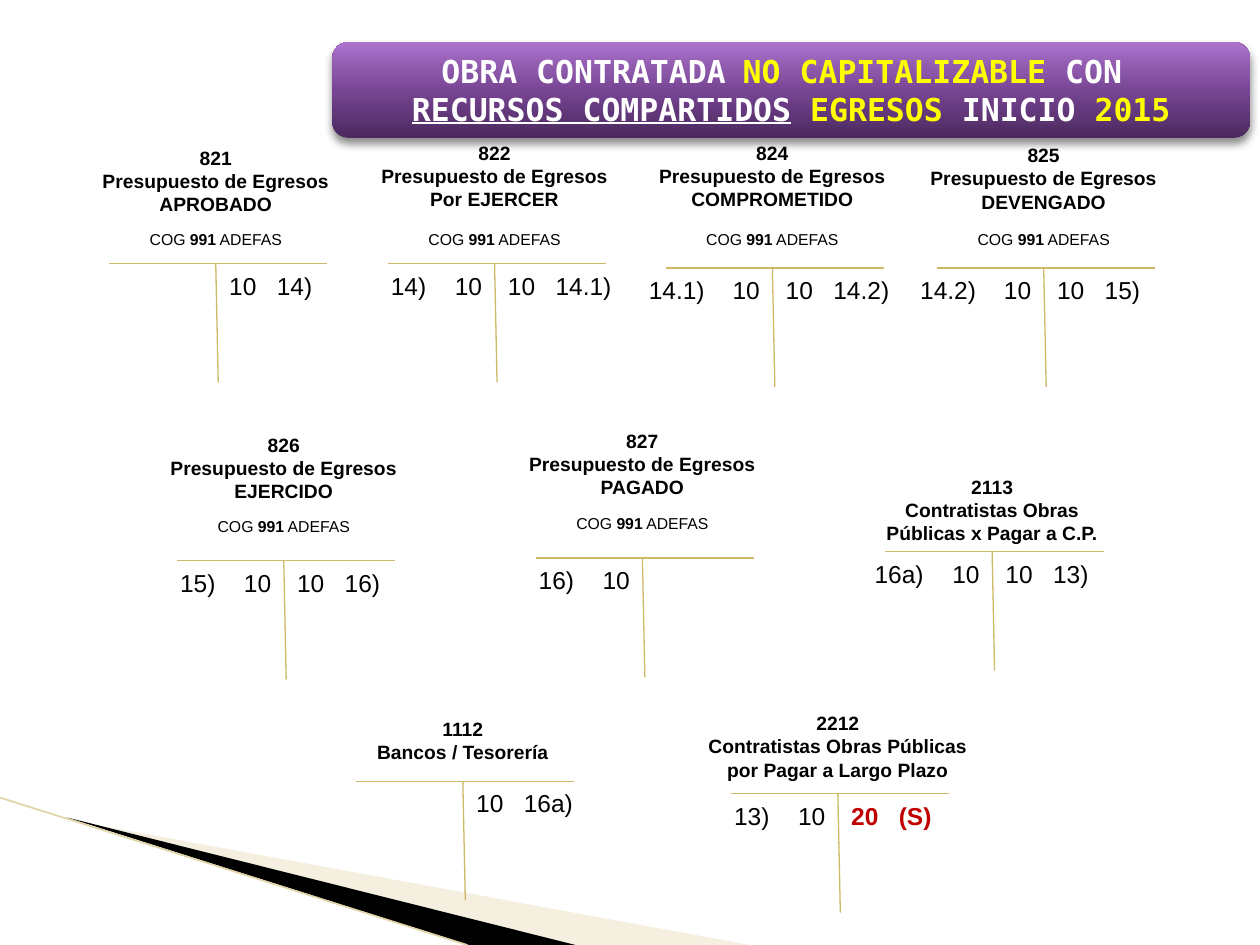
from dataclasses import dataclass

from lxml import etree
from pptx import Presentation
from pptx.dml.color import RGBColor
from pptx.enum.shapes import MSO_CONNECTOR, MSO_SHAPE
from pptx.enum.text import MSO_ANCHOR, MSO_AUTO_SIZE, PP_ALIGN
from pptx.oxml.ns import qn
from pptx.util import Cm, Pt

BLACK = RGBColor(0x00, 0x00, 0x00)
WHITE = RGBColor(0xFF, 0xFF, 0xFF)
YELLOW = RGBColor(0xFF, 0xFF, 0x00)
RED = RGBColor(0xC0, 0x00, 0x00)
GOLD = RGBColor(0xCE, 0xB9, 0x66)
PALE_GOLD = RGBColor(0xE1, 0xD3, 0xA6)
CREAM = RGBColor(0xE4, 0xD7, 0xAD)
BANNER_STOPS = [
    (0, RGBColor(0x4B, 0x29, 0x5E)),
    (50, RGBColor(0x78, 0x45, 0x94)),
    (70, RGBColor(0x8C, 0x58, 0xAA)),
    (100, RGBColor(0xAD, 0x73, 0xCF)),
]

LEFT, CENTER = PP_ALIGN.LEFT, PP_ALIGN.CENTER
MIDDLE = MSO_ANCHOR.MIDDLE
GROW = MSO_AUTO_SIZE.SHAPE_TO_FIT_TEXT
STRAIGHT = MSO_CONNECTOR.STRAIGHT
ROUNDED = MSO_SHAPE.ROUNDED_RECTANGLE

INSET = 0.25
BAR_WIDTH, BAR_LEFT_PART = 4.4, 2.15
STEM_HEIGHT, STEM_SLANT = 2.4, 0.05
ENTRY_HEIGHT, CREDIT_WIDTH, CREDIT_TAB = 0.86, 3.38, 0.96

HEADING = {"size": Pt(11), "name": "Arial", "bold": True}
SMALL = {"size": Pt(9), "name": "Arial", "bold": False}
ENTRY = {"size": Pt(14), "name": "Arial", "bold": False}
BANNER = {"size": Pt(18), "name": "DejaVu Sans Mono", "bold": True}


@dataclass
class Account:
    """A T account in cm: everything is centred on its stem."""
    number: str
    title: str
    stem: float
    bar_top: float
    title_top: float
    title_width: float
    debit: str = ""
    debit_width: float = 2.34
    credit: str = ""
    cog_top: float = 0
    is_balance: bool = False


ACCOUNTS = [
    Account("821", "Presupuesto de Egresos APROBADO", 4.35, 5.31, 2.82, 5.2,
            credit="10\t14)", cog_top=4.5),
    Account("822", "Presupuesto de Egresos Por EJERCER", 9.97, 5.31, 2.72, 5.2,
            "14)\t10", credit="10\t14.1)", cog_top=4.5),
    Account("824", "Presupuesto de Egresos COMPROMETIDO", 15.57, 5.4, 2.72, 5.36,
            "14.1)\t10", 2.74, "10\t14.2)", 4.5),
    Account("825", "Presupuesto de Egresos DEVENGADO", 21.04, 5.4, 2.77, 6.2,
            "14.2)\t10", 2.74, "10\t15)", 4.5),
    Account("826", "Presupuesto de Egresos EJERCIDO", 5.72, 11.3, 8.61, 5.94,
            "15)\t10", credit="10\t16)", cog_top=10.29),
    Account("827", "Presupuesto de Egresos PAGADO", 12.95, 11.25, 8.53, 5.16,
            "16)\t10", cog_top=10.24),
    Account("2113", "Contratistas Obras Públicas x Pagar a C.P.", 20, 11.12, 9.45, 5,
            "16a)\t10", 2.62, "10\t13)"),
    Account("1112", "Bancos / Tesorería", 9.33, 15.75, 14.33, 6.35,
            credit="10\t16a)"),
    Account("2212", "Contratistas Obras Públicas por Pagar a Largo Plazo", 16.89, 16,
            14.22, 6.35, "13)\t10", credit="20\t(S)", is_balance=True),
]


def add_run(paragraph, text, style, color=BLACK, **changes):
    run = paragraph.add_run()
    run.text = text
    for name, value in {**style, **changes}.items():
        setattr(run.font, name, value)
    run.font.color.rgb = color


def add_paragraph(frame, is_first, alignment=LEFT):
    paragraph = frame.paragraphs[0] if is_first else frame.add_paragraph()
    paragraph.alignment = alignment
    return paragraph


def add_text_frame(slide, left, top, width, height):
    frame = slide.shapes.add_textbox(Cm(left), Cm(top), Cm(width), Cm(height)).text_frame
    frame.word_wrap = True
    frame.auto_size = GROW
    return frame


def add_line(slide, start, end, color, width):
    line = slide.shapes.add_connector(STRAIGHT, *(Cm(value) for value in start + end))
    line.line.color.rgb = color
    line.line.width = Pt(width)
    etree.SubElement(line._element.spPr, qn("a:effectLst"))


def add_triangle(slide, points, color, opacity=100):
    corners = [(Cm(x), Cm(y)) for x, y in points]
    builder = slide.shapes.build_freeform(*corners[0])
    builder.add_line_segments(corners[1:])
    shape = builder.convert_to_shape()
    shape.shadow.inherit = False
    shape.line.fill.background()
    shape.fill.solid()
    shape.fill.fore_color.rgb = color
    if opacity < 100:
        color_element = shape._element.spPr.find(".//" + qn("a:srgbClr"))
        etree.SubElement(color_element, qn("a:alpha"), val=str(opacity * 1000))


def add_corner_decoration(slide):
    add_triangle(slide, [(1.4, 16.53), (15.11, 19.05), (11.58, 19.05)], CREAM, 40)
    add_triangle(slide, [(1.35, 16.48), (11.6, 19.05), (9.45, 19.05)], BLACK)
    add_line(slide, (0, 16.08), (9.42, 19.05), PALE_GOLD, 0.95)


def style_banner(shape):
    """Purple gradient and soft shadow below."""
    shape.line.fill.background()
    shape.fill.gradient()
    shape.fill.gradient_angle = 90
    properties = shape._element.spPr
    stops = properties.find(".//" + qn("a:gsLst"))
    for stop in list(stops):
        stops.remove(stop)
    for position, color in BANNER_STOPS:
        stop = etree.SubElement(stops, qn("a:gs"), pos=str(position * 1000))
        etree.SubElement(stop, qn("a:srgbClr"), val=str(color))
    shape.shadow.inherit = False
    shadow = etree.SubElement(properties.find(qn("a:effectLst")), qn("a:outerShdw"),
                              blurRad=str(Pt(5)), dist=str(Pt(3)), dir="5400000",
                              rotWithShape="0")
    shadow_color = etree.SubElement(shadow, qn("a:srgbClr"), val=str(BLACK))
    etree.SubElement(shadow_color, qn("a:alpha"), val="45000")


def add_banner(slide):
    shape = slide.shapes.add_shape(ROUNDED, Cm(6.7), Cm(0.85), Cm(18.5), Cm(1.93))
    style_banner(shape)
    frame = shape.text_frame
    frame.word_wrap = True
    frame.vertical_anchor = MIDDLE
    first = add_paragraph(frame, True, CENTER)
    add_run(first, "OBRA CONTRATADA", BANNER, WHITE)
    add_run(first, " ", BANNER, WHITE, size=Pt(16))
    add_run(first, "NO CAPITALIZABLE ", BANNER, YELLOW)
    add_run(first, "CON ", BANNER, WHITE)
    second = add_paragraph(frame, False, CENTER)
    add_run(second, "RECURSOS COMPARTIDOS", BANNER, WHITE, underline=True)
    add_run(second, " ", BANNER, WHITE)
    add_run(second, "EGRESOS", BANNER, YELLOW)
    add_run(second, " INICIO ", BANNER, WHITE)
    add_run(second, "2015", BANNER, YELLOW)


def add_entry(slide, text, left, top, width, tab, tab_alignment, **format_values):
    frame = add_text_frame(slide, left, top, width, ENTRY_HEIGHT)
    frame.margin_right = 0
    paragraph = add_paragraph(frame, True)
    tabs = etree.SubElement(paragraph._p.get_or_add_pPr(), qn("a:tabLst"))
    etree.SubElement(tabs, qn("a:tab"), pos=str(Cm(tab)), algn=tab_alignment)
    add_run(paragraph, text, ENTRY, **format_values)


def add_account(slide, account):
    stem, top = account.stem, account.bar_top
    bar_left = stem - BAR_LEFT_PART
    add_line(slide, (bar_left, top), (bar_left + BAR_WIDTH, top), GOLD, 0.75)
    add_line(slide, (stem, top), (stem + STEM_SLANT, top + STEM_HEIGHT), GOLD, 0.75)

    width = account.title_width
    frame = add_text_frame(slide, stem - width / 2, account.title_top, width, 1.68)
    for index, text in enumerate((account.number, account.title)):
        add_run(add_paragraph(frame, index == 0, CENTER), text, HEADING)

    if account.cog_top:
        frame = add_text_frame(slide, stem - 1.65, account.cog_top, 3.3, 0.64)
        paragraph = add_paragraph(frame, True, CENTER)
        add_run(paragraph, "COG ", SMALL)
        add_run(paragraph, "991", SMALL, bold=True)
        add_run(paragraph, " ADEFAS", SMALL)
    if account.debit:
        width = account.debit_width
        add_entry(slide, account.debit, stem - width, top + 0.02, width,
                  width - 2 * INSET, "r")
    if account.credit:
        emphasis = {"color": RED, "bold": True} if account.is_balance else {}
        add_entry(slide, account.credit, stem + 0.02, top + 0.02, CREDIT_WIDTH,
                  CREDIT_TAB, "l", **emphasis)


def main():
    presentation = Presentation()
    presentation.slide_width, presentation.slide_height = Cm(25.4), Cm(19.05)
    slide = presentation.slides.add_slide(presentation.slide_layouts[6])
    add_corner_decoration(slide)
    for account in ACCOUNTS:
        add_account(slide, account)
    add_banner(slide)
    presentation.save("out.pptx")


if __name__ == "__main__":
    main()
